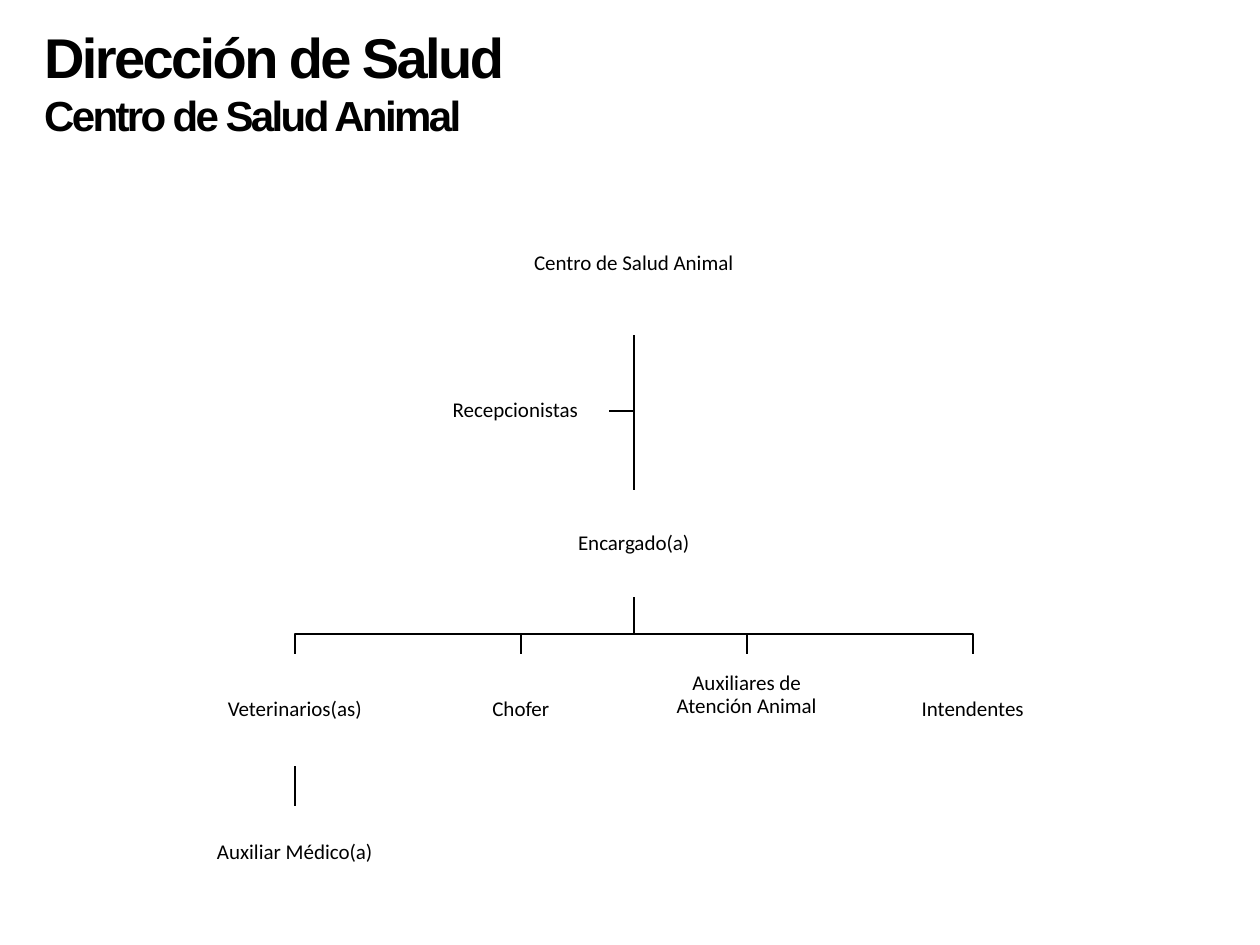
from lxml import etree
from pptx import Presentation
from pptx.dml.color import RGBColor
from pptx.enum.shapes import MSO_CONNECTOR, MSO_SHAPE
from pptx.enum.text import MSO_ANCHOR, MSO_AUTO_SIZE, PP_ALIGN
from pptx.oxml.ns import qn
from pptx.util import Inches, Pt

BLACK = RGBColor(0x00, 0x00, 0x00)
WHITE = RGBColor(0xFF, 0xFF, 0xFF)
TOP, LEFT, BOTTOM, RIGHT = range(4)
STAFF = ["Veterinarios(as)", "Chofer", "Auxiliares de Atención Animal", "Intendentes"]


def add_title(s, left, top, width, height):
    sp = s.shapes.title
    sp.left, sp.top, sp.width, sp.height = left, top, width, height
    tf = sp.text_frame
    tf.text = "Dirección de Salud\nCentro de Salud Animal"
    tf.word_wrap = True
    tf.auto_size = MSO_AUTO_SIZE.NONE
    tf.vertical_anchor = MSO_ANCHOR.TOP
    for p, size in zip(tf.paragraphs, (32, 24)):
        p.alignment = PP_ALIGN.LEFT
        p.space_before = Pt(0)
        font = p.runs[0].font
        font.name, font.size, font.bold = "Arial", Pt(size), True
        font.color.rgb = BLACK
        p.runs[0]._r.get_or_add_rPr().set("spc", "-150")


def add_position(s, text, center, top, width, height):
    sp = s.shapes.add_shape(MSO_SHAPE.RECTANGLE, center - width // 2, top, width, height)
    sp.shadow.inherit = False
    sp.fill.solid()
    sp.fill.fore_color.rgb = WHITE
    sp.line.fill.background()
    tf = sp.text_frame
    tf.text = text
    tf.word_wrap = True
    tf.vertical_anchor = MSO_ANCHOR.MIDDLE
    tf.margin_left = tf.margin_right = tf.margin_top = tf.margin_bottom = Inches(0.01)
    p = tf.paragraphs[0]
    p.alignment = PP_ALIGN.CENTER
    p.line_spacing = 0.9
    font = p.runs[0].font
    font.name, font.size = "Calibri", Pt(12)
    font.color.rgb = BLACK
    return sp


def set_line(sp):
    sp.line.color.rgb = BLACK
    sp.line.width = Pt(1)


def add_straight(s, upper, lower):
    line = s.shapes.add_connector(MSO_CONNECTOR.STRAIGHT, 0, 0, 0, 0)
    line.begin_connect(upper, BOTTOM)
    line.end_connect(lower, TOP)
    set_line(line)
    etree.SubElement(line._element.spPr, qn("a:effectLst"))


def add_bent(s, points):
    builder = s.shapes.build_freeform(*points[0])
    builder.add_line_segments(points[1:], close=False)
    sp = builder.convert_to_shape()
    sp.shadow.inherit = False
    sp.fill.background()
    set_line(sp)


def add_org_chart(s, left, top, width):
    middle = left + width // 2
    box_w, box_h = Inches(1.48), Inches(0.74)
    center = add_position(s, "Centro de Salud Animal", middle, top, Inches(2.22), Inches(1.14))
    manager = add_position(s, "Encargado(a)", middle, top + Inches(2.37), Inches(1.75), Inches(0.85))
    desk = add_position(s, "Recepcionistas", middle - Inches(0.94), top + Inches(1.37), box_w, box_h)

    pitch = (width - box_w) // (len(STAFF) - 1)
    staff = [
        add_position(s, text, left + box_w // 2 + i * pitch, top + Inches(3.67), box_w, Inches(0.89))
        for i, text in enumerate(STAFF)
    ]
    staff[2].text_frame.margin_bottom = Inches(0.25)
    vet = staff[0]
    assistant = add_position(s, "Auxiliar Médico(a)", vet.left + box_w // 2,
                             top + Inches(4.88), box_w, box_h)

    add_straight(s, center, manager)
    add_straight(s, vet, assistant)
    desk_y = desk.top + desk.height // 2
    add_bent(s, [(middle, center.top + center.height), (middle, desk_y),
                 (desk.left + desk.width, desk_y)])
    bus_y = top + Inches(3.51)
    for sp in staff:
        x = sp.left + sp.width // 2
        add_bent(s, [(middle, manager.top + manager.height), (middle, bus_y), (x, bus_y), (x, sp.top)])


def main():
    prs = Presentation()
    prs.slide_width, prs.slide_height = Inches(10), Inches(7.5)
    s = prs.slides.add_slide(prs.slide_layouts[5])
    add_title(s, Inches(0.25), Inches(0.13), Inches(7.58), Inches(1.04))
    add_org_chart(s, Inches(1.6), Inches(1.52), Inches(6.86))
    prs.save("out.pptx")


if __name__ == "__main__":
    main()
